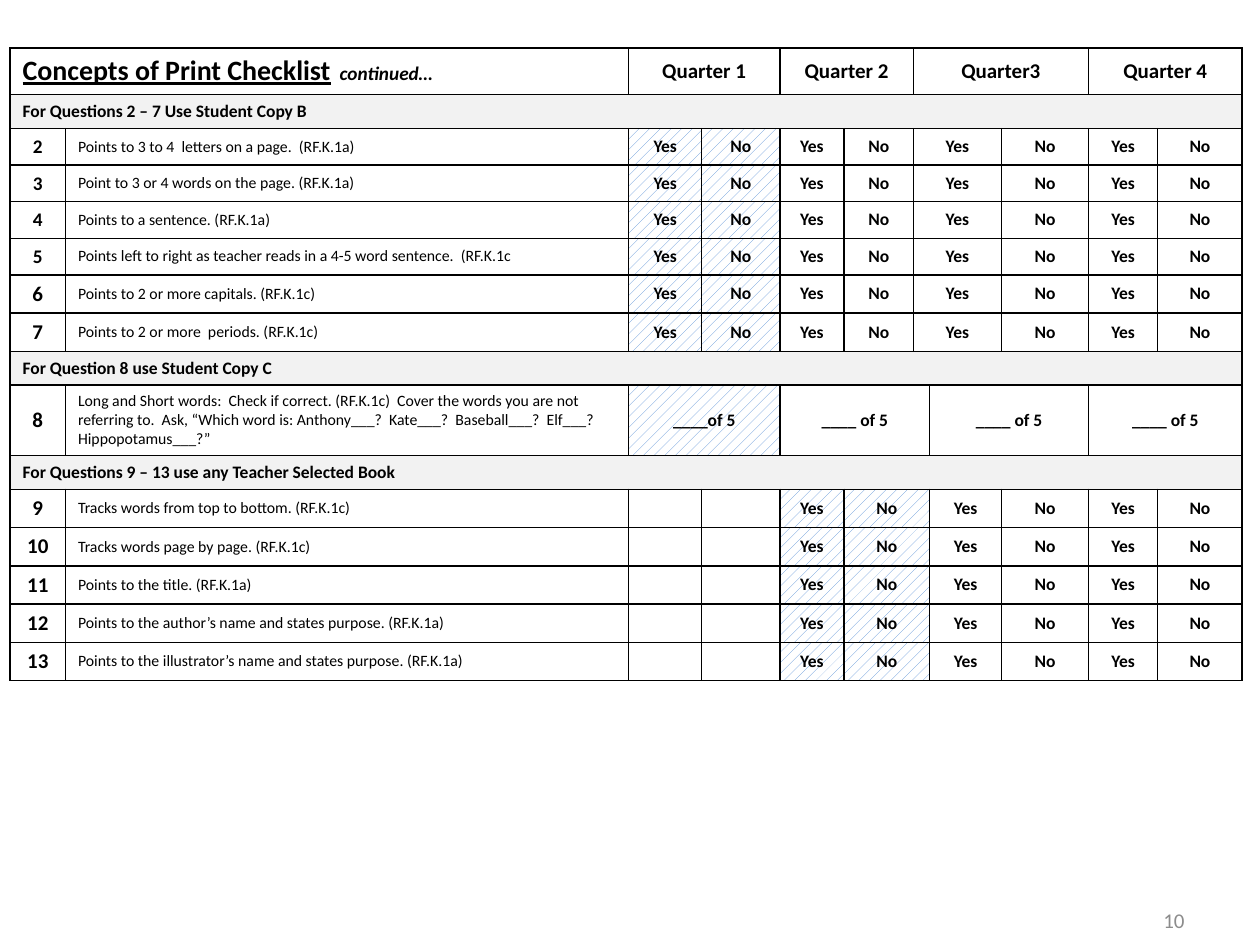
import lxml.etree
import pptx
import pptx.dml.color
import pptx.enum.dml
import pptx.enum.text
import pptx.oxml.ns
import pptx.util

Inches, Pt = pptx.util.Inches, pptx.util.Pt
ALIGN = pptx.enum.text.PP_ALIGN
MIDDLE = pptx.enum.text.MSO_ANCHOR.MIDDLE

COLORS = {"ink": "000000", "paper": "FFFFFF", "band": "F2F2F2", "hatch": "558ED5", "page": "8C8C8C"}
FONT = "Calibri"
COLUMN_WIDTHS = [0.44, 4.47, 0.58, 0.62, 0.51, 0.55, 0.13, 0.57, 0.69, 0.55, 0.67]

HEADING = [
    ("Concepts of Print Checklist", {"size": 16, "bold": True, "underline": True}),
    ("  ", {"size": 11, "italic": True}),
    ("continued…", {"size": 11, "bold": True, "italic": True}),
]
QUARTERS = [("Quarter 1", 2, 3), ("Quarter 2", 4, 5), ("Quarter3", 6, 8), ("Quarter 4", 9, 10)]

YES_NO_EARLY = [("Yes", 2, 2), ("No", 3, 3), ("Yes", 4, 4), ("No", 5, 5),
                ("Yes", 6, 7), ("No", 8, 8), ("Yes", 9, 9), ("No", 10, 10)]
OUT_OF_FIVE = [("____of 5", 2, 3), ("____ of 5", 4, 6), ("____ of 5", 7, 8), ("____ of 5", 9, 10)]
YES_NO_LATE = [("", 2, 2), ("", 3, 3), ("Yes", 4, 4), ("No", 5, 6),
               ("Yes", 7, 7), ("No", 8, 8), ("Yes", 9, 9), ("No", 10, 10)]

SECTIONS = [
    {"title": "For Questions 2 – 7 Use Student Copy B", "answers": YES_NO_EARLY, "hatched": (2, 3),
     "questions": [
         (2, "Points to 3 to 4  letters on a page.  (RF.K.1a)", 0.29),
         (3, "Point to 3 or 4 words on the page. (RF.K.1a)", 0.29),
         (4, "Points to a sentence. (RF.K.1a)", 0.29),
         (5, "Points left to right as teacher reads in a 4-5 word sentence.  (RF.K.1c", 0.29),
         (6, "Points to 2 or more capitals. (RF.K.1c)", 0.3),
         (7, "Points to 2 or more  periods. (RF.K.1c)", 0.3)]},
    {"title": "For Question 8 use Student Copy C", "answers": OUT_OF_FIVE, "hatched": (2,),
     "questions": [
         (8, "Long and Short words:  Check if correct. (RF.K.1c)  Cover the words you are not "
             "referring to.  Ask, “Which word is: Anthony___?  Kate___?  Baseball___?  Elf___?  "
             "Hippopotamus___?”", 0.55)]},
    {"title": "For Questions 9 – 13 use any Teacher Selected Book", "answers": YES_NO_LATE, "hatched": (4, 5),
     "questions": [
         (9, "Tracks words from top to bottom. (RF.K.1c)", 0.3),
         (10, "Tracks words page by page. (RF.K.1c)", 0.3),
         (11, "Points to the title. (RF.K.1a)", 0.3),
         (12, "Points to the author’s name and states purpose. (RF.K.1a)", 0.3),
         (13, "Points to the illustrator’s name and states purpose. (RF.K.1a)", 0.3)]},
]


def rgb(name):
    """Return the named colour."""
    return pptx.dml.color.RGBColor.from_string(COLORS[name])


def write(paragraph, text, size=10, bold=False, italic=False, underline=False, color="ink", align=ALIGN.LEFT):
    """Add one formatted run to a paragraph."""
    paragraph.alignment = align
    run = paragraph.add_run()
    run.text = text
    font = run.font
    font.name, font.size, font.bold = FONT, Pt(size), bold
    font.italic, font.underline = italic, underline
    font.color.rgb = rgb(color)


def style_cell(cell):
    """Give a cell black borders, a white fill and a small empty line."""
    properties = cell._tc.get_or_add_tcPr()
    for side in ("a:lnL", "a:lnR", "a:lnT", "a:lnB"):
        border = lxml.etree.SubElement(properties, pptx.oxml.ns.qn(side), w=str(Pt(1)))
        solid = lxml.etree.SubElement(border, pptx.oxml.ns.qn("a:solidFill"))
        lxml.etree.SubElement(solid, pptx.oxml.ns.qn("a:srgbClr"), val=COLORS["ink"])
    cell.fill.solid()
    cell.fill.fore_color.rgb = rgb("paper")
    cell.vertical_anchor = MIDDLE
    paragraph_xml = cell.text_frame.paragraphs[0]._p
    lxml.etree.SubElement(paragraph_xml, pptx.oxml.ns.qn("a:endParaRPr"), sz="900")


def hatch(cell):
    """Fill a cell with blue diagonal dashes."""
    cell.fill.patterned()
    cell.fill.pattern = pptx.enum.dml.MSO_PATTERN.DASHED_UPWARD_DIAGONAL
    cell.fill.fore_color.rgb = rgb("hatch")
    cell.fill.back_color.rgb = rgb("paper")


def span(table, row, first, last):
    """Merge a run of columns and return the leading cell."""
    cell = table.cell(row, first)
    if last > first:
        cell.merge(table.cell(row, last))
    return cell


def add_checklist(slide):
    """Build the checklist table."""
    heights = [0.37]
    for section in SECTIONS:
        heights += [0.27] + [height for _, _, height in section["questions"]]
    table = slide.shapes.add_table(
        len(heights), len(COLUMN_WIDTHS), Inches(0.08), Inches(0.38),
        Inches(sum(COLUMN_WIDTHS)), Inches(sum(heights))).table
    table.first_row = table.horz_banding = False
    for column, width in zip(table.columns, COLUMN_WIDTHS):
        column.width = Inches(width)
    for row, height in zip(table.rows, heights):
        row.height = Inches(height)
    for cell in table.iter_cells():
        style_cell(cell)

    heading = span(table, 0, 0, 1).text_frame.paragraphs[0]
    for text, formatting in HEADING:
        write(heading, text, **formatting)
    for quarter, first, last in QUARTERS:
        write(span(table, 0, first, last).text_frame.paragraphs[0], quarter,
              size=12, bold=True, align=ALIGN.CENTER)

    row = 1
    for section in SECTIONS:
        band = span(table, row, 0, len(COLUMN_WIDTHS) - 1)
        band.fill.fore_color.rgb = rgb("band")
        write(band.text_frame.paragraphs[0], section["title"], bold=True)
        for row, (number, question, _) in enumerate(section["questions"], row + 1):
            write(table.cell(row, 0).text_frame.paragraphs[0], str(number),
                  size=11 if number < 6 else 12, bold=True, align=ALIGN.CENTER)
            write(table.cell(row, 1).text_frame.paragraphs[0], question, size=9)
            for answer, first, last in section["answers"]:
                cell = span(table, row, first, last)
                if first in section["hatched"]:
                    hatch(cell)
                if answer:
                    write(cell.text_frame.paragraphs[0], answer, bold=True, align=ALIGN.CENTER)
        row += 1


def main():
    """Build and save the slide."""
    deck = pptx.Presentation()
    deck.slide_width, deck.slide_height = Inches(10), Inches(7.5)
    slide = deck.slides.add_slide(deck.slide_layouts[6])
    add_checklist(slide)
    page_number = slide.shapes.add_textbox(Inches(7.17), Inches(7.1), Inches(2.33), Inches(0.4)).text_frame
    page_number.word_wrap = True
    page_number.vertical_anchor = MIDDLE
    write(page_number.paragraphs[0], "10", size=12, color="page", align=ALIGN.RIGHT)
    deck.save("out.pptx")


if __name__ == "__main__":
    main()
